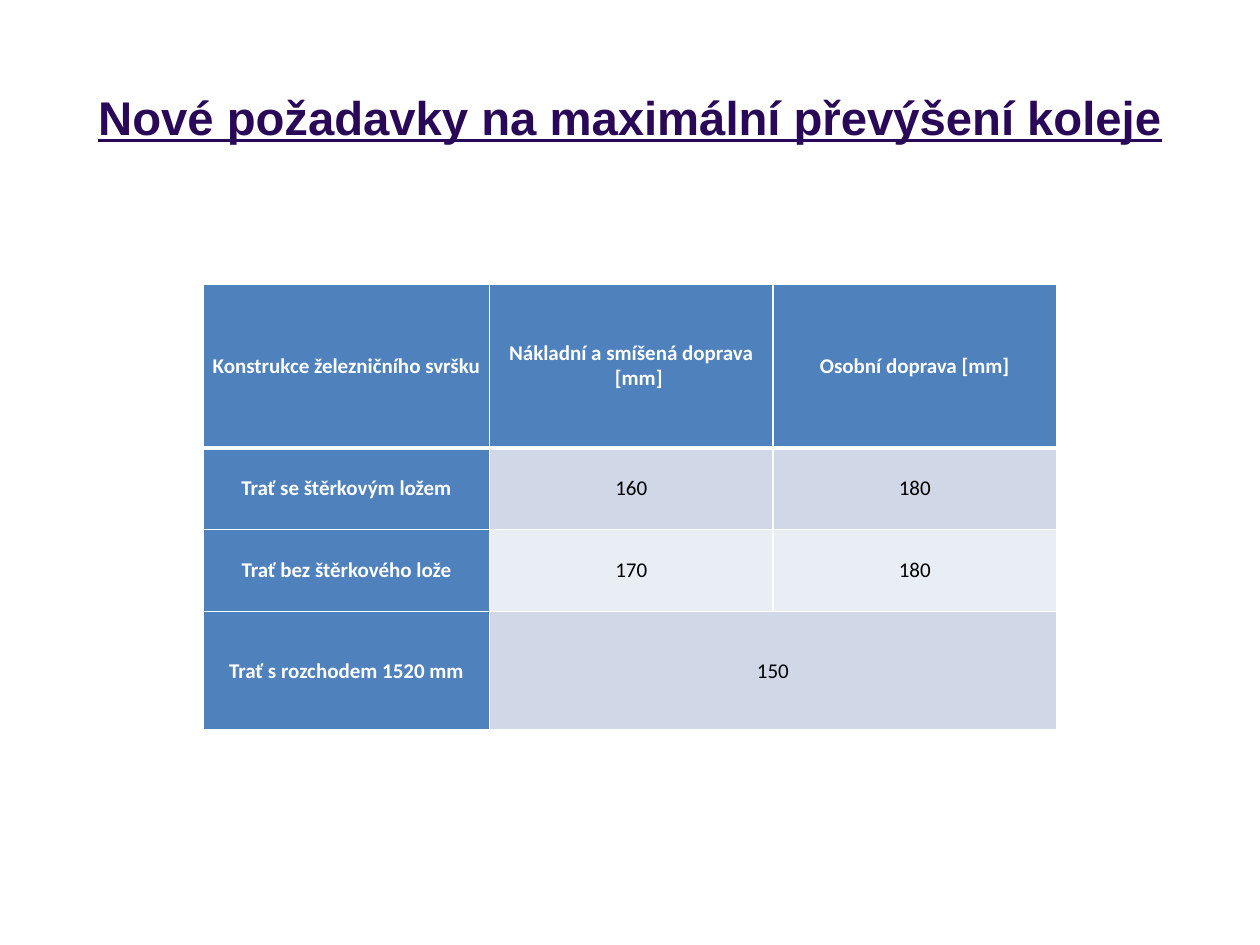
from lxml import etree
from pptx import Presentation
from pptx.dml.color import RGBColor
from pptx.enum.text import MSO_ANCHOR, PP_ALIGN
from pptx.oxml.ns import qn
from pptx.util import Pt

MIDDLE = MSO_ANCHOR.MIDDLE
CENTER = PP_ALIGN.CENTER

WHITE = "FFFFFF"
BLUE = "4F81BD"
BANDS = ["D0D8E8", "E9EDF4"]
COLUMN_WIDTHS = [163.4, 162, 162]
ROW_HEIGHTS = [93.6, 46.8, 46.8, 67.7]
ROWS = [
    ["Konstrukce železničního svršku", "Nákladní a smíšená doprava [mm]", "Osobní doprava [mm]"],
    ["Trať se štěrkovým ložem", "160", "180"],
    ["Trať bez štěrkového lože", "170", "180"],
    ["Trať s rozchodem 1520 mm", "150", ""],
]


def color(value):
    return RGBColor.from_string(value)


def style_font(font, name, size, value, bold):
    font.name = name
    font.size = Pt(size)
    font.color.rgb = color(value)
    font.bold = bold


def set_borders(cell, widths):
    properties = cell._tc.get_or_add_tcPr()
    for index, (side, width) in enumerate(widths.items()):
        line = etree.Element(qn(f"a:ln{side}"), w=str(Pt(width)))
        fill = etree.SubElement(line, qn("a:solidFill"))
        etree.SubElement(fill, qn("a:srgbClr"), val=WHITE)
        properties.insert(index, line)


def add_title(page, text, left, top, width, height):
    box = page.shapes.add_textbox(Pt(left), Pt(top), Pt(width), Pt(height))
    frame = box.text_frame
    frame.word_wrap = True
    frame.vertical_anchor = MIDDLE
    frame.text = text
    para = frame.paragraphs[0]
    para.alignment = CENTER
    span = para.runs[0]
    style_font(span.font, "Arial", 27, "2A0858", True)
    span.font.underline = True


def style_cell(cell, text, row, column):
    heading = row == 0 or column == 0
    cell.text = text
    cell.vertical_anchor = MIDDLE
    cell.margin_left = cell.margin_right = Pt(3.6)
    cell.margin_top = cell.margin_bottom = Pt(0)
    cell.fill.solid()
    cell.fill.fore_color.rgb = color(BLUE if heading else BANDS[(row - 1) % 2])
    top = 3 if row == 1 else 1
    bottom = 3 if row == 0 else 1
    set_borders(cell, {"L": 1, "R": 1, "T": top, "B": bottom})
    para = cell.text_frame.paragraphs[0]
    para.alignment = CENTER
    indent = para._p.get_or_add_pPr()
    indent.set("marL", str(Pt(8.64)))
    indent.set("indent", str(Pt(-8.64)))
    for span in para.runs:
        style_font(span.font, "Calibri", 12, WHITE if heading else "000000", heading)


def add_limits_table(page, left, top):
    frame = page.shapes.add_table(
        len(ROWS), len(COLUMN_WIDTHS), Pt(left), Pt(top),
        Pt(sum(COLUMN_WIDTHS)), Pt(sum(ROW_HEIGHTS)))
    table = frame.table
    for column, width in zip(table.columns, COLUMN_WIDTHS):
        column.width = Pt(width)
    for row, height in zip(table.rows, ROW_HEIGHTS):
        row.height = Pt(height)
    for row, texts in enumerate(ROWS):
        for column, text in enumerate(texts):
            style_cell(table.cell(row, column), text, row, column)
    table.cell(3, 1).merge(table.cell(3, 2))


def main():
    deck = Presentation()
    deck.slide_width, deck.slide_height = Pt(720), Pt(540)
    page = deck.slides.add_slide(deck.slide_layouts[6])
    add_title(page, "Nové požadavky na maximální převýšení koleje", 36, 21.6, 648, 90)
    add_limits_table(page, 116.3, 162.3)
    deck.save("out.pptx")


if __name__ == "__main__":
    main()
